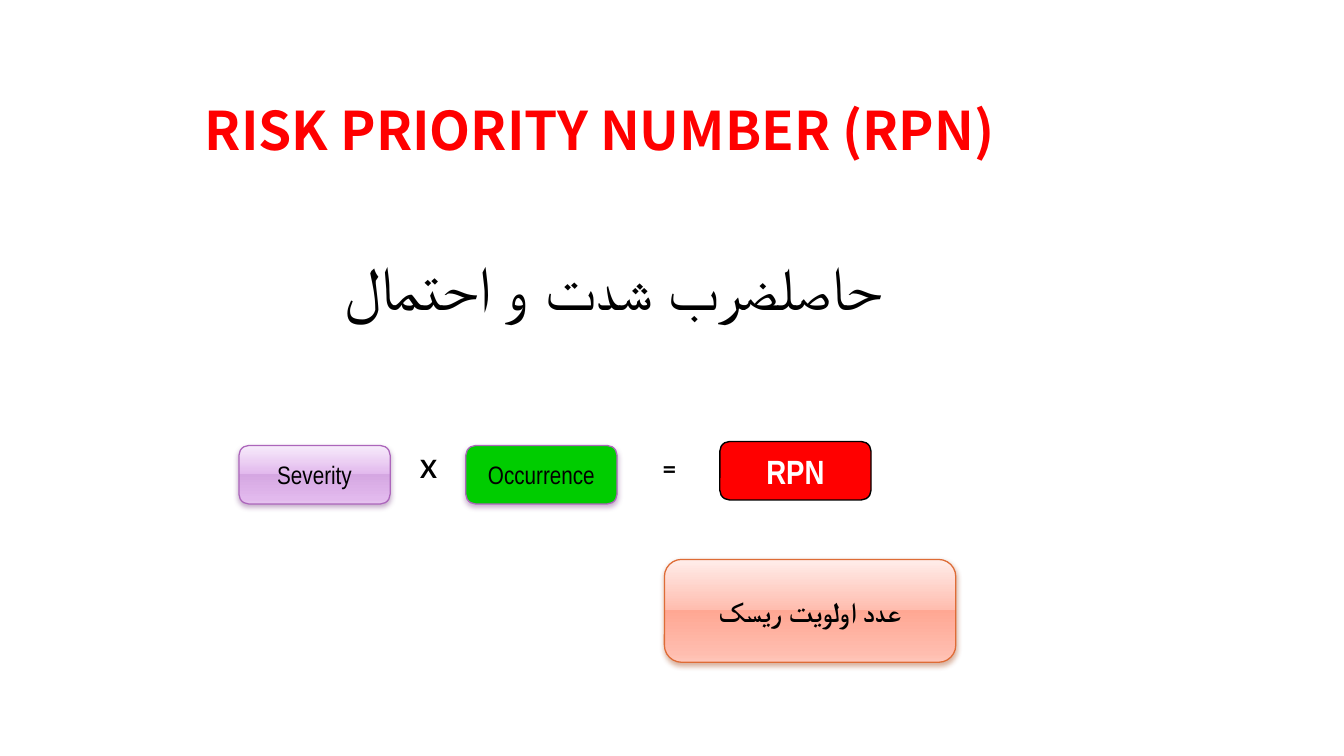
import pptx
import pptx.util
import pptx.dml.color
import pptx.enum.shapes
import pptx.enum.text
import pptx.oxml
import pptx.oxml.ns

WIDTH, HEIGHT = 13.33, 7.5
ANCHOR = pptx.enum.text.MSO_ANCHOR
STOPS = (0, 49, 49, 92, 100)
PURPLE = ("F7EBFB", "E2B9ED", "D5A7E2", "E2B9ED", "E6C6EF")
SALMON = ("FFEDEA", "FFBDAF", "FFA793", "FFBDAF", "FFC8BC")

# Places are left, top, width, height in percent of the slide.
TITLE = {"text": "RISK PRIORITY NUMBER (RPN)", "place": (5.03, 4.67, 79.22, 16.67),
         "font": "Noto Sans CJK KR", "size": 38, "color": "FF0000", "bold": True}
FACTOR = {"top": 58.93, "size": 18, "color": "000000", "bold": False,
          "line": "AC66BB", "weight": 0.9, "shadow": "6E307B"}
FACTOR_SIZE = (11.25, 7.73)
FACTORS = [
    {**FACTOR, "text": "Severity", "left": 17.78, "fill": PURPLE},
    {**FACTOR, "text": "Occurrence", "left": 34.66, "fill": "00CC00"},
    {"text": "RPN", "left": 53.56, "top": 58.4, "fill": "FF0000", "line": "000000",
     "weight": 1, "size": 24, "color": "FFFFFF", "bold": True},
]
RESULT = {"text": "عدد اولویت ریسک", "place": (49.44, 74, 21.68, 13.6), "rtl": True,
          "fill": SALMON, "line": "DE6C36", "weight": 0.9, "shadow": "9C3707",
          "font": "Lato", "size": 20, "color": "000000", "bold": True, "wrap": True}
SIGN = {"font": "Lato", "size": 18, "color": "000000", "bold": True, "rtl": True}
LABELS = [
    {"text": "حاصلضرب شدت و احتمال", "place": (16.58, 32.27, 58.14, 15.6), "rtl": True,
     "font": "TeX Gyre Schola", "size": 44, "color": "000000", "bold": False, "wrap": True},
    {**SIGN, "text": "X", "place": (30.46, 59.33, 2.85, 5.33)},
    {**SIGN, "text": "=", "place": (47.64, 59.33, 4.35, 5.33), "wrap": True},
]


def rgb(value):
    return pptx.dml.color.RGBColor.from_string(value)


def to_lengths(place):
    """Turn percentages of the slide into lengths."""
    return [pptx.util.Inches(share * side / 100)
            for share, side in zip(place, (WIDTH, HEIGHT) * 2)]


def drawing_xml(markup):
    head, rest = markup.split(">", 1)
    return pptx.oxml.parse_xml(f"{head} {pptx.oxml.ns.nsdecls('a')}>{rest}")


def write(box, item):
    frame = box.text_frame
    frame.word_wrap = item.get("wrap", False)
    para = frame.paragraphs[0]
    para.alignment = pptx.enum.text.PP_ALIGN.CENTER
    if item.get("rtl"):
        para._p.get_or_add_pPr().set("rtl", "1")
    span = para.add_run()
    span.text = item["text"]
    formats = {"name": item["font"], "size": pptx.util.Pt(item["size"]), "bold": item["bold"]}
    for name, value in formats.items():
        setattr(span.font, name, value)
    span.font.color.rgb = rgb(item["color"])
    span._r.get_or_add_rPr().append(drawing_xml(f'<a:cs typeface="{item["font"]}"></a:cs>'))


def paint(box, fill):
    """Fill with one colour, or with a top-down gradient of several."""
    if isinstance(fill, str):
        box.fill.solid()
        box.fill.fore_color.rgb = rgb(fill)
        return
    stops = "".join(f'<a:gs pos="{stop * 1000}"><a:srgbClr val="{color}"/></a:gs>'
                    for stop, color in zip(STOPS, fill))
    gradient = drawing_xml(f'<a:gradFill><a:gsLst>{stops}</a:gsLst>'
                           '<a:lin ang="5400000" scaled="0"/></a:gradFill>')
    box._element.spPr.find(pptx.oxml.ns.qn("a:prstGeom")).addnext(gradient)


def add_card(page, item):
    box = page.shapes.add_shape(pptx.enum.shapes.MSO_SHAPE.ROUNDED_RECTANGLE,
                                *to_lengths(item["place"]))
    paint(box, item["fill"])
    box.line.color.rgb = rgb(item["line"])
    box.line.width = pptx.util.Pt(item["weight"])
    box.shadow.inherit = False
    if "shadow" in item:
        effects = box._element.spPr.find(pptx.oxml.ns.qn("a:effectLst"))
        effects.append(drawing_xml(
            '<a:outerShdw blurRad="50800" dist="25400" dir="5400000" rotWithShape="0">'
            f'<a:srgbClr val="{item["shadow"]}"><a:alpha val="38000"/></a:srgbClr>'
            '</a:outerShdw>'))
    box.text_frame.vertical_anchor = ANCHOR.MIDDLE
    write(box, item)


def main():
    deck = pptx.Presentation()
    deck.slide_width = pptx.util.Inches(WIDTH)
    deck.slide_height = pptx.util.Inches(HEIGHT)
    page = deck.slides.add_slide(deck.slide_layouts[5])

    title = page.shapes.title
    for name, value in zip(("left", "top", "width", "height"), to_lengths(TITLE["place"])):
        setattr(title, name, value)
    frame = title.text_frame
    margins = {"margin_left": 0.05, "margin_right": 0.05, "margin_top": 0, "margin_bottom": 0}
    for name, value in margins.items():
        setattr(frame, name, pptx.util.Inches(value))
    frame.vertical_anchor = ANCHOR.BOTTOM
    write(title, {**TITLE, "wrap": True})

    for label in LABELS:
        write(page.shapes.add_textbox(*to_lengths(label["place"])), label)
    for factor in FACTORS:
        place = (factor["left"], factor["top"], *FACTOR_SIZE)
        add_card(page, {**factor, "place": place, "font": "Arial Narrow"})
    add_card(page, RESULT)
    deck.save("out.pptx")


if __name__ == "__main__":
    main()
